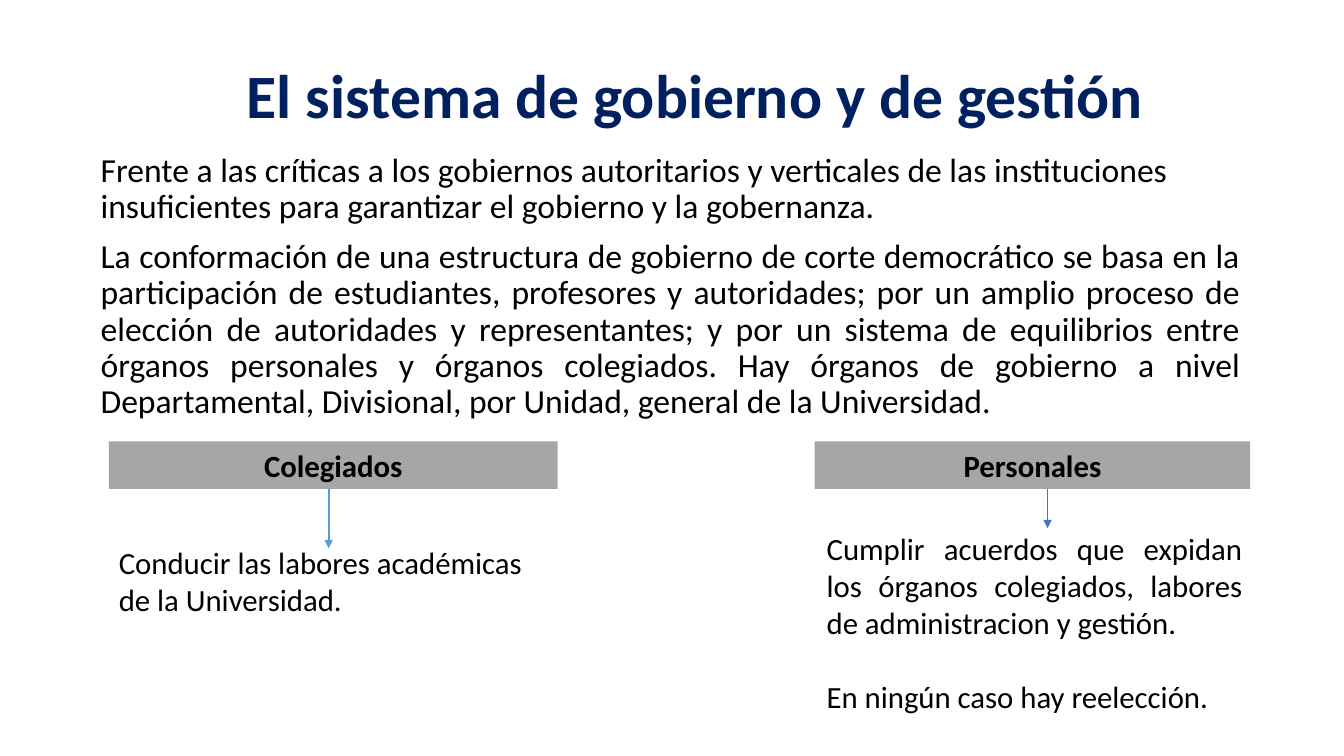
from dataclasses import dataclass

from lxml.etree import SubElement
from pptx import Presentation
from pptx.dml.color import RGBColor
from pptx.enum.shapes import MSO_CONNECTOR as CONNECTOR, MSO_SHAPE as SHAPE
from pptx.enum.text import MSO_ANCHOR as ANCHOR, PP_ALIGN as ALIGN
from pptx.oxml.ns import qn
from pptx.util import Inches, Pt


@dataclass(frozen=True)
class Theme:
    font: str = "Calibri"
    navy: str = "002060"
    black: str = "000000"
    grey: str = "A6A6A6"
    light_blue: str = "5B9BD5"
    blue: str = "4472C4"
    title_size: int = 44
    body_size: int = 24
    organ_size: int = 22


theme = Theme()


def write(frame, paragraphs, size, color=theme.black, bold=False, spacing=1.0, gap=0):
    """Fill a frame with (text, alignment) paragraphs; gap goes between them."""
    frame.word_wrap = True
    frame.text = "\n".join(text for text, _ in paragraphs)
    for number, (paragraph, (_, align)) in enumerate(zip(frame.paragraphs, paragraphs)):
        paragraph.alignment = align
        paragraph.line_spacing = spacing
        paragraph.space_before = Pt(gap if number else 0)
        font = paragraph.runs[0].font
        font.name, font.size, font.bold = theme.font, Pt(size), bold
        font.color.rgb = RGBColor.from_string(color)


def add_text(left, top, width, height):
    box = slide.shapes.add_textbox(Inches(left), Inches(top), Inches(width), Inches(height))
    return box.text_frame


prs = Presentation()
prs.slide_width, prs.slide_height = Inches(13.33), Inches(7.5)
slide = prs.slides.add_slide(prs.slide_layouts[6])

# Title
title = add_text(2.35, 0.25, 10.98, 1.45)
title.vertical_anchor = ANCHOR.MIDDLE
write(title, [("El sistema de gobierno y de gestión", ALIGN.LEFT)],
      theme.title_size, theme.navy, bold=True, spacing=0.9)

# Introduction
introduction = [
    ("Frente a las críticas a los gobiernos autoritarios y verticales de las instituciones "
     "insuficientes para garantizar el gobierno y la gobernanza.", ALIGN.LEFT),
    ("La conformación de una estructura de gobierno de corte democrático se basa en la "
     "participación de estudiantes, profesores y autoridades; por un amplio proceso de "
     "elección de autoridades y representantes; y por un sistema de equilibrios entre "
     "órganos personales y órganos colegiados. Hay órganos de gobierno a nivel "
     "Departamental, Divisional, por Unidad, general de la Universidad.", ALIGN.JUSTIFY),
]
write(add_text(0.9, 1.47, 11.5, 2.73), introduction, theme.body_size, spacing=0.9, gap=10)

# Kinds of organ: heading, left, width, arrow (x, top, bottom, colour, weight), duties box, duties
organs = [
    ("Colegiados", 1.08, 4.45, (3.26, 4.85, 5.44, theme.light_blue, 1.5),
     (1.08, 5.35, 4.45, 0.84),
     [("Conducir las labores académicas de la Universidad.", ALIGN.LEFT)]),
    ("Personales", 8.08, 4.32, (10.39, 4.76, 5.24, theme.blue, 1),
     (8.1, 5.21, 4.32, 1.95),
     [("Cumplir acuerdos que expidan los órganos colegiados, labores de administracion "
       "y gestión.", ALIGN.JUSTIFY),
      ("En ningún caso hay reelección.", ALIGN.JUSTIFY)]),
]
for heading, left, width, (x, top, bottom, color, weight), duties_box, duties in organs:
    # Arrow from the heading to its duties
    arrow = slide.shapes.add_connector(CONNECTOR.STRAIGHT, Inches(x), Inches(top),
                                       Inches(x), Inches(bottom))
    arrow.line.color.rgb = RGBColor.from_string(color)
    arrow.line.width = Pt(weight)
    SubElement(arrow.line._get_or_add_ln(), qn("a:tailEnd"), type="triangle")
    SubElement(arrow._element.spPr, qn("a:effectLst"))

    # Heading bar
    bar = slide.shapes.add_shape(SHAPE.RECTANGLE, Inches(left), Inches(4.38),
                                 Inches(width), Inches(0.47))
    bar.shadow.inherit = False
    bar.fill.solid()
    bar.fill.fore_color.rgb = RGBColor.from_string(theme.grey)
    bar.line.fill.background()
    write(bar.text_frame, [(heading, ALIGN.CENTER)], theme.organ_size, bold=True)

    # Duties, set apart by one line
    write(add_text(*duties_box), duties, theme.organ_size, gap=26)

prs.save("out.pptx")
